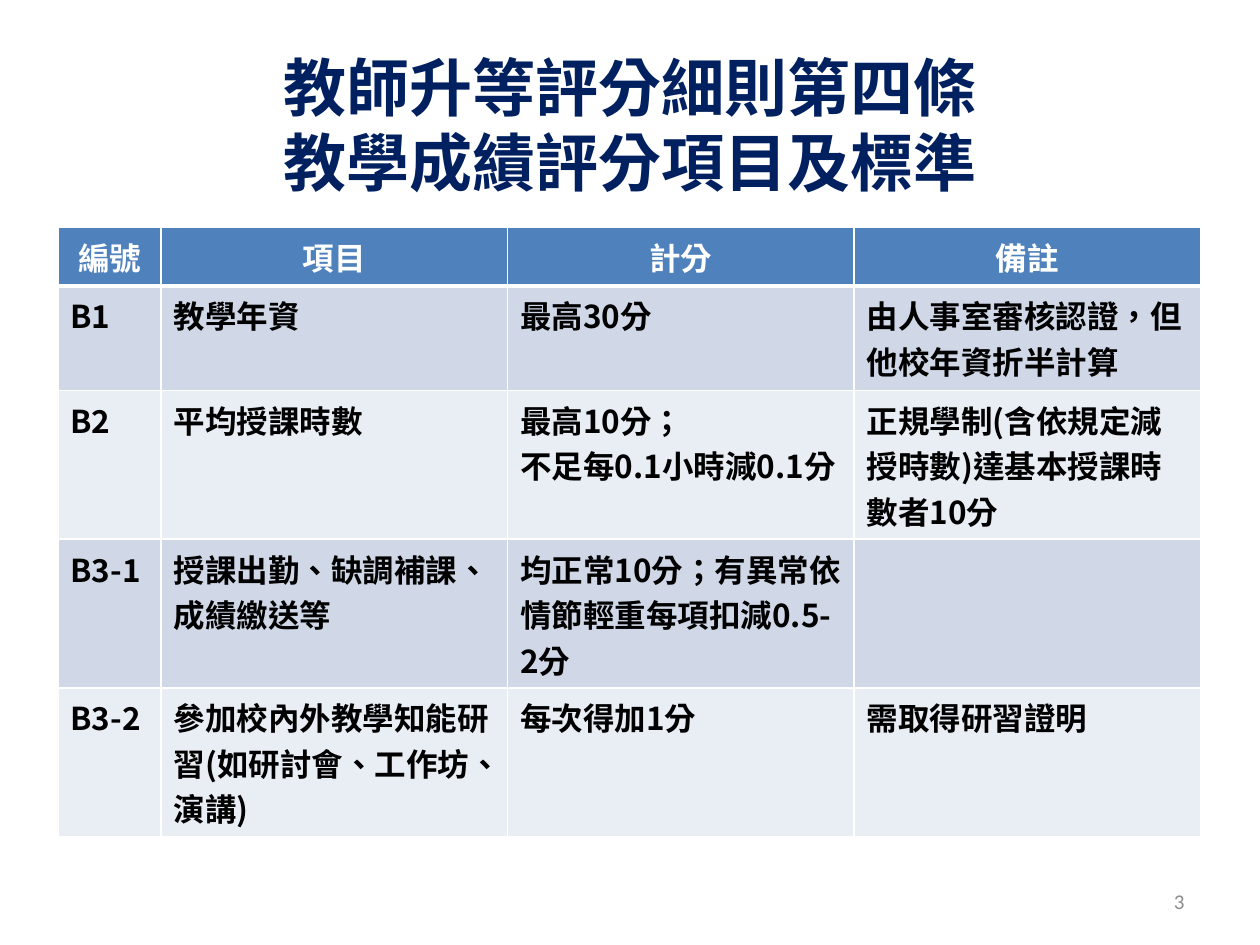
"""Build the slide on teaching score items and standards for faculty promotion."""
from dataclasses import dataclass

from lxml import etree
from pptx import Presentation
from pptx import util as u
from pptx.dml.color import RGBColor
from pptx.enum import text
from pptx.oxml.ns import qn


@dataclass(frozen=True)
class Theme:
    navy: str = "002060"
    header: str = "4F81BD"
    bands: tuple = ("D0D8E8", "E9EDF4")
    white: str = "FFFFFF"
    black: str = "000000"
    grey: str = "8C8C8C"
    title_size: int = 36
    body_size: int = 18
    number_size: int = 12
    title_font: str = "Times New Roman"
    body_font: str = "Noto Sans CJK SC"
    number_font: str = "Calibri"


theme = Theme()


def write(frame, words, *, size, color, font, bold=False, align=None, anchor=None, pitch=None):
    frame.word_wrap = True
    if anchor is not None:
        frame.vertical_anchor = anchor
    frame.text = words
    for paragraph in frame.paragraphs:
        paragraph.alignment = align
        if pitch:
            paragraph.line_spacing = u.Pt(pitch)
        for run in paragraph.runs:
            run.font.size = u.Pt(size)
            run.font.bold = bold
            run.font.name = font
            run.font.color.rgb = RGBColor.from_string(color)
            properties = run.font._element
            properties.set("lang", "zh-TW")
            east_asian = etree.Element(qn("a:ea"), typeface=theme.body_font)
            properties.find(qn("a:latin")).addnext(east_asian)


def set_borders(cell, bottom_width):
    properties = cell._tc.get_or_add_tcPr()
    widths = {"a:lnL": 1, "a:lnR": 1, "a:lnT": 1, "a:lnB": bottom_width}
    for index, (side, width) in enumerate(widths.items()):
        line = etree.Element(qn(side), w=str(u.Pt(width)))
        fill = etree.SubElement(line, qn("a:solidFill"))
        etree.SubElement(fill, qn("a:srgbClr"), val=theme.white)
        properties.insert(index, line)


deck = Presentation()
deck.slide_width, deck.slide_height = u.Inches(10), u.Inches(7.5)
slide = deck.slides.add_slide(deck.slide_layouts[6])

title = slide.shapes.add_textbox(u.Inches(0.5), u.Inches(0.36), u.Inches(9), u.Inches(1.25))
write(title.text_frame, "教師升等評分細則第四條\v教學成績評分項目及標準",
      size=theme.title_size, color=theme.navy, font=theme.title_font, bold=True,
      align=text.PP_ALIGN.CENTER, anchor=text.MSO_ANCHOR.MIDDLE, pitch=43)

criteria = [
    ("編號", "項目", "計分", "備註"),
    ("B1", "教學年資", "最高30分", "由人事室審核認證，但他校年資折半計算"),
    ("B2", "平均授課時數", "最高10分；\n不足每0.1小時減0.1分",
     "正規學制(含依規定減授時數)達基本授課時數者10分"),
    ("B3-1", "授課出勤、缺調補課、成績繳送等",
     "均正常10分；有異常依情節輕重每項扣減0.5-2分", ""),
    ("B3-2", "參加校內外教學知能研習(如研討會、工作坊、演講)", "每次得加1分", "需取得研習證明"),
]
column_widths = [0.82] + [2.75] * 3
row_heights = [0.47, 0.83] + [1.18] * 3

scores = slide.shapes.add_table(
    len(criteria), len(column_widths), u.Inches(0.46), u.Inches(1.8),
    u.Inches(sum(column_widths)), u.Inches(sum(row_heights))).table
for column, width in zip(scores.columns, column_widths):
    column.width = u.Inches(width)

for row_index, (entries, height) in enumerate(zip(criteria, row_heights)):
    scores.rows[row_index].height = u.Inches(height)
    is_header = row_index == 0
    for column_index, entry in enumerate(entries):
        cell = scores.cell(row_index, column_index)
        cell.fill.solid()
        cell.fill.fore_color.rgb = RGBColor.from_string(
            theme.header if is_header else theme.bands[(row_index - 1) % 2])
        cell.vertical_anchor = text.MSO_ANCHOR.MIDDLE if is_header else text.MSO_ANCHOR.TOP
        set_borders(cell, 3 if is_header else 1)
        write(cell.text_frame, entry, size=theme.body_size, font=theme.body_font, bold=True,
              color=theme.white if is_header else theme.black,
              align=text.PP_ALIGN.CENTER if is_header else text.PP_ALIGN.LEFT)

page_number = slide.shapes.add_textbox(u.Inches(7.17), u.Inches(6.95), u.Inches(2.33), u.Inches(0.4))
write(page_number.text_frame, "3", size=theme.number_size, color=theme.grey,
      font=theme.number_font, align=text.PP_ALIGN.RIGHT, anchor=text.MSO_ANCHOR.MIDDLE)

deck.save("out.pptx")
